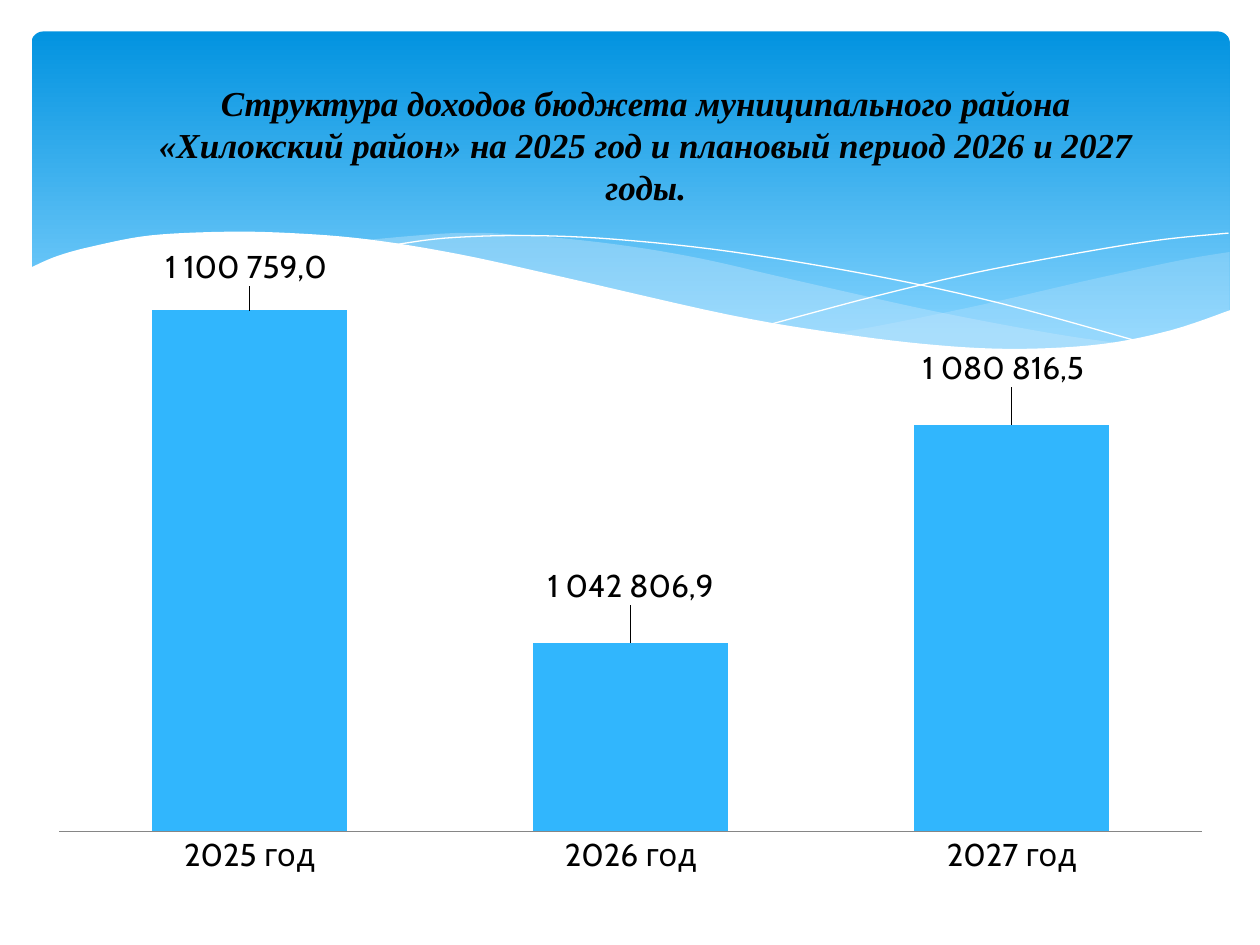
"""Build the slide on the district budget revenues for 2025 to 2027."""
import lxml.etree
import pptx
import pptx.chart.data
import pptx.dml.color
import pptx.enum.chart
import pptx.enum.shapes
import pptx.enum.text
import pptx.oxml
import pptx.oxml.ns
import pptx.util

Pt = pptx.util.Pt
RGBColor = pptx.dml.color.RGBColor

BLACK = RGBColor(0x00, 0x00, 0x00)
WHITE = RGBColor(0xFF, 0xFF, 0xFF)
BANNER_TOP = RGBColor(0x02, 0x93, 0xE0)
BANNER_BOTTOM = RGBColor(0x83, 0xD3, 0xFE)
RIPPLE = RGBColor(0xC6, 0xE7, 0xFC)
BAR = RGBColor(0x31, 0xB6, 0xFD)
AXIS = RGBColor(0x86, 0x86, 0x86)

TITLE = ("Структура доходов бюджета муниципального района «Хилокский район» "
         "на 2025 год и плановый период 2026 и 2027 годы.")
REVENUES = [
    ("2025 год", 1100759.0, "1 100 759,0", (-0.003, -0.03)),
    ("2026 год", 1042806.9, "1 042 806,9", (0, -0.05)),
    ("2027 год", 1080816.5, "1 080 816,5", (-0.007, -0.05)),
]

RIGHT_RIPPLE_TOP = [(702.7, 144), (673.2, 149), (619.9, 160.6), (560.9, 174.2),
                    (508.3, 185), (475.9, 190.8)]
RIGHT_RIPPLE_BOTTOM = [(475.9, 190.8), (507.6, 195.1), (545, 198.7), (586.1, 200.2),
                       (627.8, 197.3), (663.1, 190.8), (683.3, 185), (702.7, 177.8)]
MIDDLE_RIPPLE_TOP = [(643, 196.6), (602.6, 190.8), (533.5, 177.8), (452.9, 159.8),
                     (399.6, 147.6), (352.1, 139.7), (302.4, 134.6), (259.9, 133.2),
                     (205.9, 137.5)]
MIDDLE_RIPPLE_BOTTOM = [(205.9, 137.5), (260.6, 146.2), (323.3, 159.8), (407.5, 178.6),
                        (468, 190.1), (519.8, 197.3), (573.1, 200.2), (617, 199.4),
                        (643, 196.6)]
FALLING_LINE = [(222.5, 140.4), (254.2, 136.1), (299.5, 134.6), (352.1, 136.8),
                (419, 144), (500.4, 157.7), (572.4, 173.5), (653, 195.8)]
RISING_LINE = [(441.4, 185), (500.4, 169.2), (558.7, 155.5), (623.5, 143.3),
               (665.3, 136.8), (702, 133.2)]
WAVE_EDGE = [(703.4, 177.1), (669.6, 188.6), (630, 196.6), (582.5, 199.4),
             (535.7, 197.3), (481, 190.8), (416.9, 180), (321.8, 158.4),
             (262.8, 145.4), (210.2, 136.8), (165.6, 133.2), (127.4, 132.5),
             (85.7, 134.6), (54.7, 140.4), (33.1, 146.2), (16.6, 153.4)]
WAVE_BASE = [(16.6, 236.9), (703.4, 236.9)]


def smooth(anchors, steps=6):
    """Return points on a Catmull-Rom curve through the anchors."""
    padded = [anchors[0], *anchors, anchors[-1]]
    curve = [anchors[0]]
    for a, b, c, d in zip(padded, padded[1:], padded[2:], padded[3:]):
        for step in range(1, steps + 1):
            t = step / steps
            curve.append(tuple(
                0.5 * (2 * q + (r - p) * t + (2 * p - 5 * q + 4 * r - s) * t ** 2
                       + (3 * q - p - 3 * r + s) * t ** 3)
                for p, q, r, s in zip(a, b, c, d)))
    return curve


def add_outline(slide, points, fill=None, alpha=None, line=None):
    """Draw a closed filled area, or an open line when there is no fill."""
    corners = [(Pt(x), Pt(y)) for x, y in points]
    builder = slide.shapes.build_freeform(*corners[0], scale=1.0)
    builder.add_line_segments(corners[1:], close=fill is not None)
    outline = builder.convert_to_shape()
    outline.shadow.inherit = False
    if fill is None:
        outline.fill.background()
        outline.line.color.rgb = line
        outline.line.width = Pt(0)
        return
    outline.line.fill.background()
    outline.fill.solid()
    outline.fill.fore_color.rgb = fill
    if alpha is not None:
        color = outline.fill._xPr.find(".//" + pptx.oxml.ns.qn("a:srgbClr"))
        lxml.etree.SubElement(color, pptx.oxml.ns.qn("a:alpha"), val=str(alpha * 1000))


def add_banner(slide):
    """Draw the rounded banner with its vertical gradient."""
    banner = slide.shapes.add_shape(pptx.enum.shapes.MSO_SHAPE.ROUNDED_RECTANGLE,
                                    Pt(18), Pt(18), Pt(684.7), Pt(194.4))
    banner.adjustments[0] = 0.034
    banner.shadow.inherit = False
    banner.line.fill.background()
    banner.fill.gradient()
    banner.fill.gradient_angle = 270
    shades = [(0, BANNER_TOP), (0.9, BANNER_BOTTOM)]
    for stop, (position, color) in zip(banner.fill.gradient_stops, shades):
        stop.position = position
        stop.color.rgb = color


def add_text(slide, text, left, top, width, height, *, font, size, color,
             bold=False, italic=False):
    """Place centred, wrapped text in the given area."""
    frame = slide.shapes.add_textbox(Pt(left), Pt(top), Pt(width), Pt(height)).text_frame
    frame.word_wrap = True
    frame.vertical_anchor = pptx.enum.text.MSO_ANCHOR.MIDDLE
    paragraph = frame.paragraphs[0]
    paragraph.alignment = pptx.enum.text.PP_ALIGN.CENTER
    run = paragraph.add_run()
    run.text = text
    set_font(run.font, font, size, color)
    run.font.bold = bold
    run.font.italic = italic


def set_font(font, name, size, color):
    """Set the typeface, size and colour."""
    font.name = name
    font.size = Pt(size)
    font.color.rgb = color


def layout_xml(**values):
    """Return a manual chart layout with the given entries in order."""
    entries = "".join(f'<c:{key} val="{value}"/>' for key, value in values.items())
    return pptx.oxml.parse_xml(
        f'<c:layout {pptx.oxml.ns.nsdecls("c")}>'
        f"<c:manualLayout>{entries}</c:manualLayout></c:layout>")


def place_plot(chart):
    """Fix the inner plot area within the chart."""
    plot_area = chart._chartSpace.chart.plotArea
    for automatic in plot_area.findall(pptx.oxml.ns.qn("c:layout")):
        plot_area.remove(automatic)
    plot_area.insert(0, layout_xml(layoutTarget="inner", xMode="edge", yMode="edge",
                                   x=0.02, y=0.02, w=0.96, h=0.89))


def label_bar(point, text, offset):
    """Write a value above its bar, moved by a fraction of the chart."""
    label = point.data_label
    run = label.text_frame.paragraphs[0].add_run()
    run.text = text
    set_font(run.font, "Cabin", 18, BLACK)
    label.position = pptx.enum.chart.XL_LABEL_POSITION.OUTSIDE_END
    index = label._dLbl.find(pptx.oxml.ns.qn("c:idx"))
    index.addnext(layout_xml(x=offset[0], y=offset[1]))


def add_revenue_chart(slide):
    """Add the column chart of revenues by year."""
    years, amounts, labels, offsets = zip(*REVENUES)
    data = pptx.chart.data.CategoryChartData(number_format="#,##0.0")
    data.categories = years
    data.add_series("Series 1", amounts)
    chart = slide.shapes.add_chart(pptx.enum.chart.XL_CHART_TYPE.COLUMN_CLUSTERED,
                                   Pt(20.2), Pt(139.7), Pt(680.4), Pt(368.6), data).chart
    chart.has_legend = False
    chart.has_title = False
    set_font(chart.font, "Cabin", 18, BLACK)
    place_plot(chart)

    year_axis = chart.category_axis
    year_axis.major_tick_mark = pptx.enum.chart.XL_TICK_MARK.NONE
    year_axis.format.line.color.rgb = AXIS
    amount_axis = chart.value_axis
    amount_axis.minimum_scale = 1010000
    amount_axis.maximum_scale = 1110000
    amount_axis.has_major_gridlines = False
    amount_axis.visible = False

    columns = chart.plots[0]
    columns.gap_width = 95
    columns.vary_by_categories = False
    revenue = columns.series[0]
    revenue.format.fill.solid()
    revenue.format.fill.fore_color.rgb = BAR
    revenue.data_labels.show_value = True
    for number, (text, offset) in enumerate(zip(labels, offsets)):
        label_bar(revenue.points[number], text, offset)


def main():
    """Build and save the slide."""
    deck = pptx.Presentation()
    deck.slide_width, deck.slide_height = Pt(720), Pt(540)
    slide = deck.slides.add_slide(deck.slide_layouts[6])
    add_banner(slide)
    add_outline(slide, smooth(RIGHT_RIPPLE_TOP) + smooth(RIGHT_RIPPLE_BOTTOM),
                fill=RIPPLE, alpha=29)
    add_outline(slide, smooth(MIDDLE_RIPPLE_TOP) + smooth(MIDDLE_RIPPLE_BOTTOM),
                fill=RIPPLE, alpha=40)
    for line in (FALLING_LINE, RISING_LINE):
        add_outline(slide, smooth(line), line=WHITE)
    add_outline(slide, smooth(WAVE_EDGE) + WAVE_BASE, fill=WHITE)
    add_text(slide, TITLE, 65.5, 31.7, 607, 102.2, font="Times New Roman", size=20,
             color=BLACK, bold=True, italic=True)
    add_revenue_chart(slide)
    deck.save("out.pptx")


if __name__ == "__main__":
    main()
